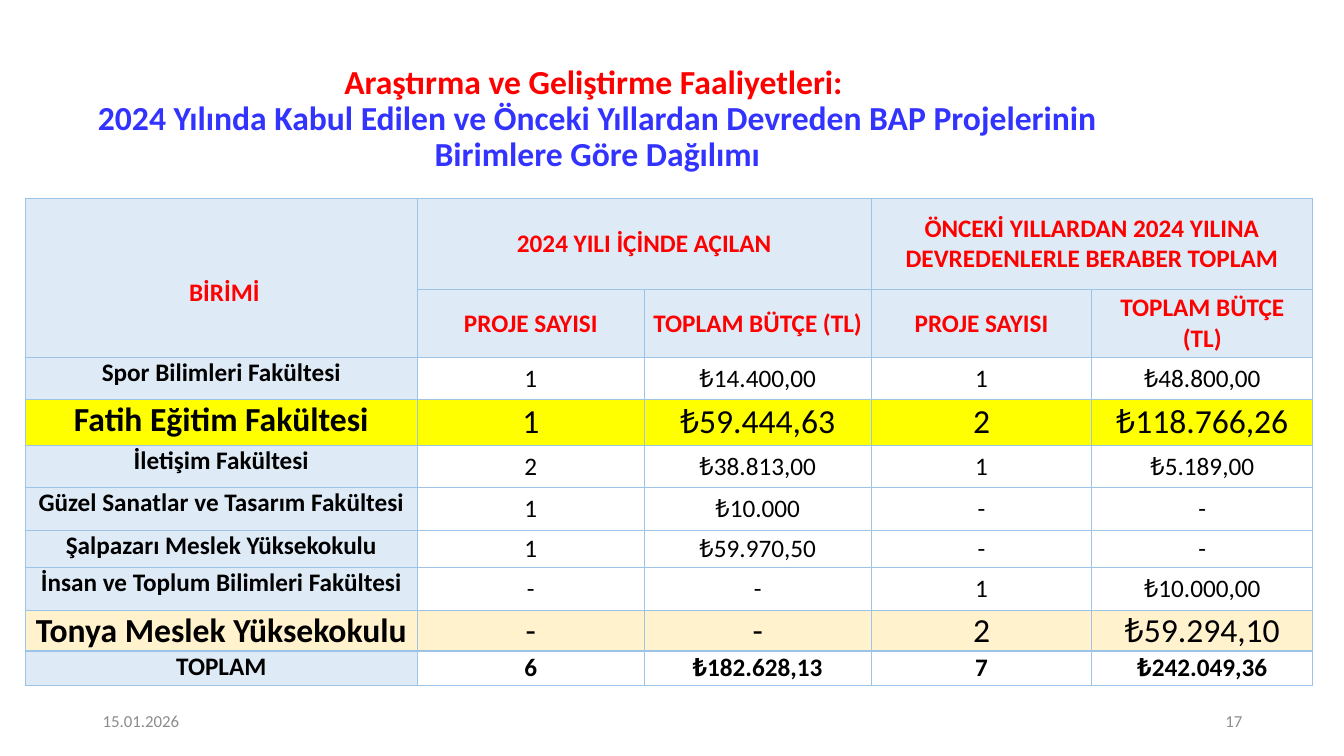
import copy
import pptx
import pptx.util
import pptx.dml.color
import pptx.enum.text
import pptx.oxml
import pptx.oxml.ns

Inches, Pt = pptx.util.Inches, pptx.util.Pt
RGBColor = pptx.dml.color.RGBColor
ALIGN = pptx.enum.text.PP_ALIGN
MIDDLE = pptx.enum.text.MSO_ANCHOR.MIDDLE
TOP = pptx.enum.text.MSO_ANCHOR.TOP

RED = RGBColor(0xFF, 0x00, 0x00)
BLUE = RGBColor(0x33, 0x33, 0xFF)
BLACK = RGBColor(0x00, 0x00, 0x00)
GREY = RGBColor(0x8C, 0x8C, 0x8C)
PALE = RGBColor(0xDE, 0xEB, 0xF7)
YELLOW = RGBColor(0xFF, 0xFF, 0x00)
CREAM = RGBColor(0xFF, 0xF2, 0xCC)
BORDER = RGBColor(0x9D, 0xC3, 0xE6)


def write(para, text, size, color, bold=False):
    run = para.add_run()
    run.text = text
    run.font.name = "Calibri"
    run.font.size = Pt(size)
    run.font.bold = bold
    run.font.color.rgb = color
    return run


def format_cell(cell, fill):
    cell.margin_left = cell.margin_right = Inches(0.07)
    cell.margin_top = cell.margin_bottom = 0
    cell.vertical_anchor = MIDDLE
    props = cell._tc.get_or_add_tcPr()
    for side in ("lnL", "lnR", "lnT", "lnB"):
        props.append(pptx.oxml.parse_xml(
            f'<a:{side} {pptx.oxml.ns.nsdecls("a")} w="12700"><a:solidFill>'
            f'<a:srgbClr val="{BORDER}"/></a:solidFill></a:{side}>'))
    if fill is None:
        cell.fill.background()
    else:
        cell.fill.solid()
        cell.fill.fore_color.rgb = fill


deck = pptx.Presentation()
deck.slide_width, deck.slide_height = Inches(13.33), Inches(7.5)
slide = deck.slides.add_slide(deck.slide_layouts[5])

# Title: one paragraph, two colours
title = slide.shapes.title
title.left, title.top = Inches(0.25), Inches(0.77)
title.width, title.height = Inches(11.35), Inches(0.83)
frame = title.text_frame
frame.auto_size = pptx.enum.text.MSO_AUTO_SIZE.NONE
frame.word_wrap = True
frame.vertical_anchor = MIDDLE
para = frame.paragraphs[0]
para.alignment = ALIGN.CENTER
para.line_spacing = 0.9
lead = write(para, "Araştırma ve Geliştirme Faaliyetleri: ", 24, RED, True)
para.add_line_break()
para._p[-1].append(copy.deepcopy(lead._r.rPr))  # the break keeps the text size
write(para, "2024 Yılında Kabul Edilen ve Önceki Yıllardan Devreden BAP "
      "Projelerinin Birimlere Göre Dağılımı", 24, BLUE, True)

# Date and page number
for text, left, align in (("15.01.2026", 0.92, ALIGN.LEFT), ("17", 9.42, ALIGN.RIGHT)):
    box = slide.shapes.add_textbox(Inches(left), Inches(6.95), Inches(3), Inches(0.4))
    box.text_frame.word_wrap = True
    box.text_frame.vertical_anchor = MIDDLE
    para = box.text_frame.paragraphs[0]
    para.alignment = align
    write(para, text, 12, GREY)

# Table content
HEADS = [
    ["BİRİMİ", "2024 YILI İÇİNDE AÇILAN", "",
     "ÖNCEKİ YILLARDAN 2024 YILINA DEVREDENLERLE BERABER TOPLAM", ""],
    ["", "PROJE SAYISI", "TOPLAM BÜTÇE (TL)", "PROJE SAYISI", "TOPLAM BÜTÇE (TL)"],
]
UNITS = [
    ["Spor Bilimleri Fakültesi", "1", "₺14.400,00", "1", "₺48.800,00"],
    ["Fatih Eğitim Fakültesi", "1", "₺59.444,63", "2", "₺118.766,26"],
    ["İletişim Fakültesi", "2", "₺38.813,00", "1", "₺5.189,00"],
    ["Güzel Sanatlar ve Tasarım Fakültesi", "1", "₺10.000", "-", "-"],
    ["Şalpazarı Meslek Yüksekokulu", "1", "₺59.970,50", "-", "-"],
    ["İnsan ve Toplum Bilimleri Fakültesi", "-", "-", "1", "₺10.000,00"],
    ["Tonya Meslek Yüksekokulu", "-", "-", "2", "₺59.294,10"],
    ["TOPLAM", "6", "₺182.628,13", "7", "₺242.049,36"],
]
MARKED = {"Fatih Eğitim Fakültesi": YELLOW, "Tonya Meslek Yüksekokulu": CREAM}
WIDTHS = [3.89, 2.25, 2.25, 2.19, 2.19]
HEIGHTS = [0.9, 0.68, 0.41, 0.46, 0.42, 0.42, 0.37, 0.43, 0.4, 0.34]

# Table grid
rows = HEADS + UNITS
table = slide.shapes.add_table(
    len(rows), len(WIDTHS), Inches(0.25), Inches(1.97),
    Inches(sum(WIDTHS)), Inches(sum(HEIGHTS))).table
for col, width in zip(table.columns, WIDTHS):
    col.width = Inches(width)
for row, height in zip(table.rows, HEIGHTS):
    row.height = Inches(height)

# Table cells
for r, row in enumerate(rows):
    head = r < len(HEADS)
    mark = MARKED.get(row[0])
    for c, text in enumerate(row):
        cell = table.cell(r, c)
        format_cell(cell, mark or (PALE if head or c == 0 else None))
        if not head and c == 0:
            cell.vertical_anchor = TOP
        if text:
            para = cell.text_frame.paragraphs[0]
            para.alignment = ALIGN.CENTER
            bold = head or c == 0 or row[0] == "TOPLAM"
            write(para, text, 24 if mark else 18, RED if head else BLACK, bold)

# Header spans, with the unit label set below the middle
unit = table.cell(0, 0)
unit.margin_top = Inches(0.3)
unit.margin_left = Inches(0.13)
unit.merge(table.cell(1, 0))
for c in (1, 3):
    table.cell(0, c).merge(table.cell(0, c + 1))

deck.save("out.pptx")
